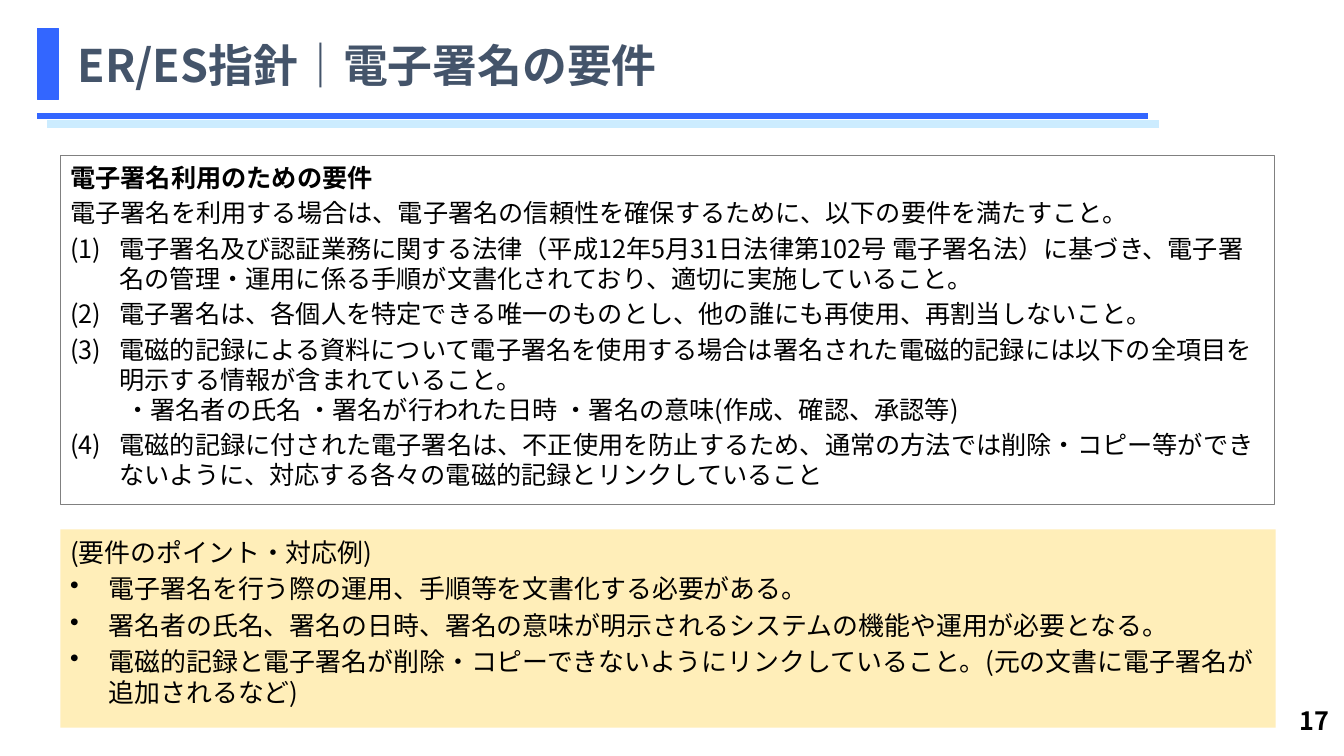
import pptx
import pptx.util
import pptx.dml.color
import pptx.enum.lang
import pptx.enum.shapes
import pptx.enum.text
import pptx.oxml.ns
import lxml.etree

Cm, Pt = pptx.util.Cm, pptx.util.Pt
PP = pptx.enum.text.PP_ALIGN
ANCHOR = pptx.enum.text.MSO_ANCHOR
RECT = pptx.enum.shapes.MSO_SHAPE.RECTANGLE
STRAIGHT = pptx.enum.shapes.MSO_CONNECTOR.STRAIGHT
FONT = "Noto Sans CJK JP"
HUES = {"blue": "3366FF", "sky": "CCECFF", "slate": "44546A",
        "black": "000000", "gray": "808080", "cream": "FFEEB9"}

TITLE = "ER/ES指針｜電子署名の要件"
PAGE = "17"
# (list kind, bold, text)
RULES = [
    ("", True, "電子署名利用のための要件"),
    ("", False, "電子署名を利用する場合は、電子署名の信頼性を確保するために、以下の要件を満たすこと。"),
    ("num", False, "電子署名及び認証業務に関する法律（平成12年5月31日法律第102号 電子署名法）に基づき、"
     "電子署名の管理・運用に係る手順が文書化されており、適切に実施していること。"),
    ("num", False, "電子署名は、各個人を特定できる唯一のものとし、他の誰にも再使用、再割当しないこと。"),
    ("num", False, "電磁的記録による資料について電子署名を使用する場合は署名された電磁的記録には"
     "以下の全項目を明示する情報が含まれていること。\n"
     " ・署名者の氏名 ・署名が行われた日時 ・署名の意味(作成、確認、承認等)"),
    ("num", False, "電磁的記録に付された電子署名は、不正使用を防止するため、通常の方法では削除・コピー等が"
     "できないように、対応する各々の電磁的記録とリンクしていること"),
]
POINTS = [
    ("", False, "(要件のポイント・対応例)"),
    ("dot", False, "電子署名を行う際の運用、手順等を文書化する必要がある。"),
    ("dot", False, "署名者の氏名、署名の日時、署名の意味が明示されるシステムの機能や運用が必要となる。"),
    ("dot", False, "電磁的記録と電子署名が削除・コピーできないようにリンクしていること。"
     "(元の文書に電子署名が追加されるなど)"),
]
# kind: (bullet tag, its attributes, hanging indent)
MARKS = {"": ("a:buNone", {}, Cm(0)),
         "num": ("a:buAutoNum", {"type": "arabicParenBoth"}, Cm(1.24)),
         "dot": ("a:buChar", {"char": "•"}, Cm(0.97))}
# (hue, width, left, right, height)
STRIPES = [("blue", 4.5, 0.94, 28.93, 2.92), ("sky", 6, 1.19, 29.21, 3.12)]


def rgb(hue):
    return pptx.dml.color.RGBColor.from_string(HUES[hue])


def add(parent, tag, **attrs):
    return lxml.etree.SubElement(parent, pptx.oxml.ns.qn(tag), attrs)


def place(shape, left, top, width, height):
    shape.left, shape.top = Cm(left), Cm(top)
    shape.width, shape.height = Cm(width), Cm(height)


def style(para, size, hue, bold):
    for run in para.runs:
        font = run.font
        font.name, font.size, font.bold = FONT, Pt(size), bold
        font.color.rgb = rgb(hue)
        font.language_id = pptx.enum.lang.MSO_LANGUAGE_ID.JAPANESE
        add(run._r.get_or_add_rPr(), "a:ea", typeface=FONT)


def write(shape, rows, size, pitch, align=PP.LEFT):
    """Fill a shape with list rows set at a fixed line pitch in points."""
    frame = shape.text_frame
    frame.word_wrap = True
    frame.auto_size = pptx.enum.text.MSO_AUTO_SIZE.NONE
    frame.vertical_anchor = ANCHOR.TOP
    frame.margin_top = Cm(0.18)
    for i, (kind, bold, text) in enumerate(rows):
        para = frame.add_paragraph() if i else frame.paragraphs[0]
        para.text = text
        tag, attrs, hang = MARKS[kind]
        props = para._p.get_or_add_pPr()
        props.set("marL", str(hang))
        props.set("indent", str(-hang))
        add(props, tag, **attrs)
        para.alignment = align
        para.line_spacing = Pt(pitch)
        para.space_before = Pt(4 if i else 0)
        style(para, size, "black", bold)


def main():
    deck = pptx.Presentation()
    deck.slide_width, deck.slide_height = Cm(33.87), Cm(19.05)
    slide = deck.slides.add_slide(deck.slide_layouts[1])
    shapes = slide.shapes

    for hue, width, left, right, y in STRIPES:
        line = shapes.add_connector(STRAIGHT, Cm(right), Cm(y), Cm(left), Cm(y))
        line.line.color.rgb, line.line.width = rgb(hue), Pt(width)
        add(line._element.spPr, "a:effectLst")

    bar = shapes.add_shape(RECT, Cm(0.94), Cm(0.71), Cm(0.53), Cm(1.8))
    bar.shadow.inherit = False
    bar.fill.solid()
    bar.fill.fore_color.rgb = bar.line.color.rgb = rgb("blue")
    bar.line.width = Pt(0.75)

    title = shapes.title
    place(title, 1.7, 0.53, 30.48, 2.21)
    title.text_frame.text = TITLE
    title.text_frame.auto_size = pptx.enum.text.MSO_AUTO_SIZE.NONE
    title.text_frame.vertical_anchor = ANCHOR.MIDDLE
    head = title.text_frame.paragraphs[0]
    head.alignment = PP.LEFT
    style(head, 32, "slate", True)

    body = slide.placeholders[1]
    place(body, 1.52, 3.91, 30.61, 8.81)
    body.line.color.rgb, body.line.width = rgb("gray"), Pt(0.75)
    write(body, RULES, 18, 21.4)

    panel = shapes.add_shape(RECT, Cm(1.52), Cm(13.34), Cm(30.63), Cm(5))
    panel.shadow.inherit = False
    panel.fill.solid()
    panel.fill.fore_color.rgb = rgb("cream")
    panel.line.fill.background()
    write(panel, POINTS, 18.5, 22.1)

    page = shapes.add_textbox(Cm(30.51), Cm(17.6), Cm(3.25), Cm(1.32))
    write(page, [("", True, PAGE)], 18, 21.4, PP.RIGHT)

    deck.save("out.pptx")


if __name__ == "__main__":
    main()
